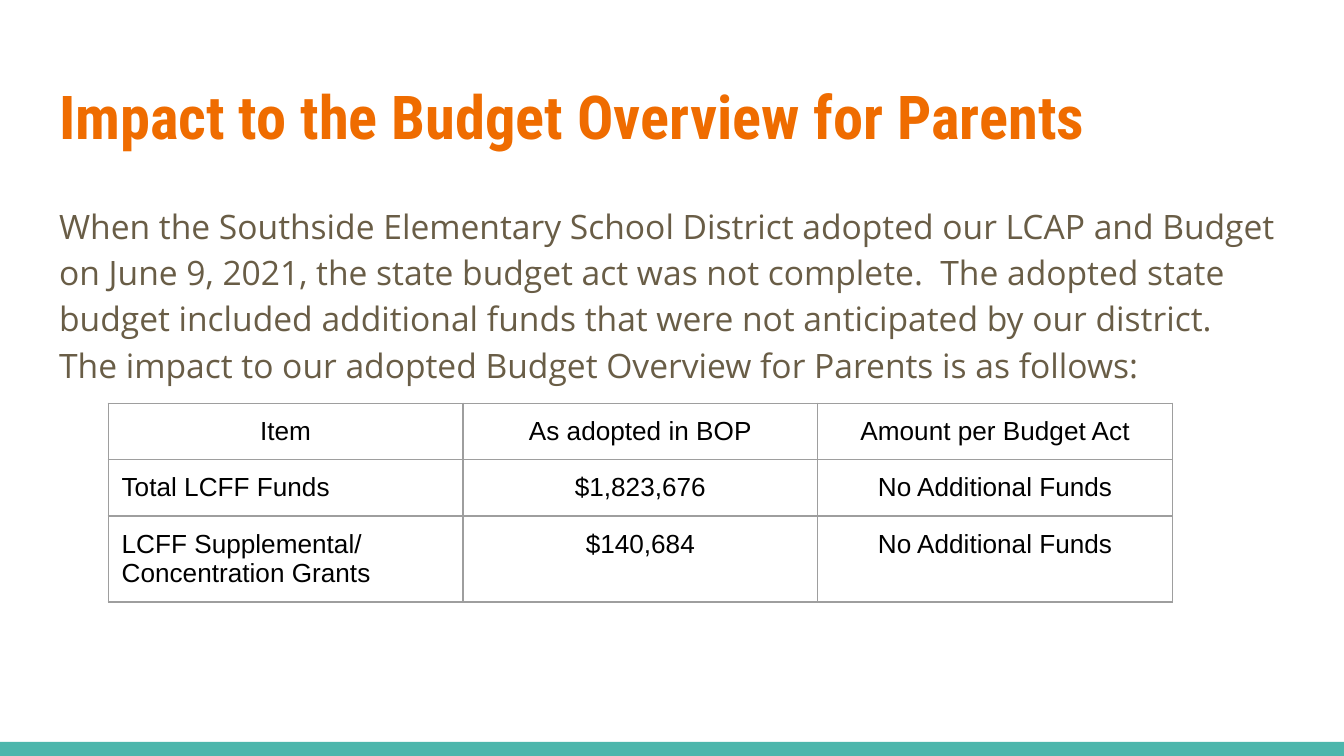
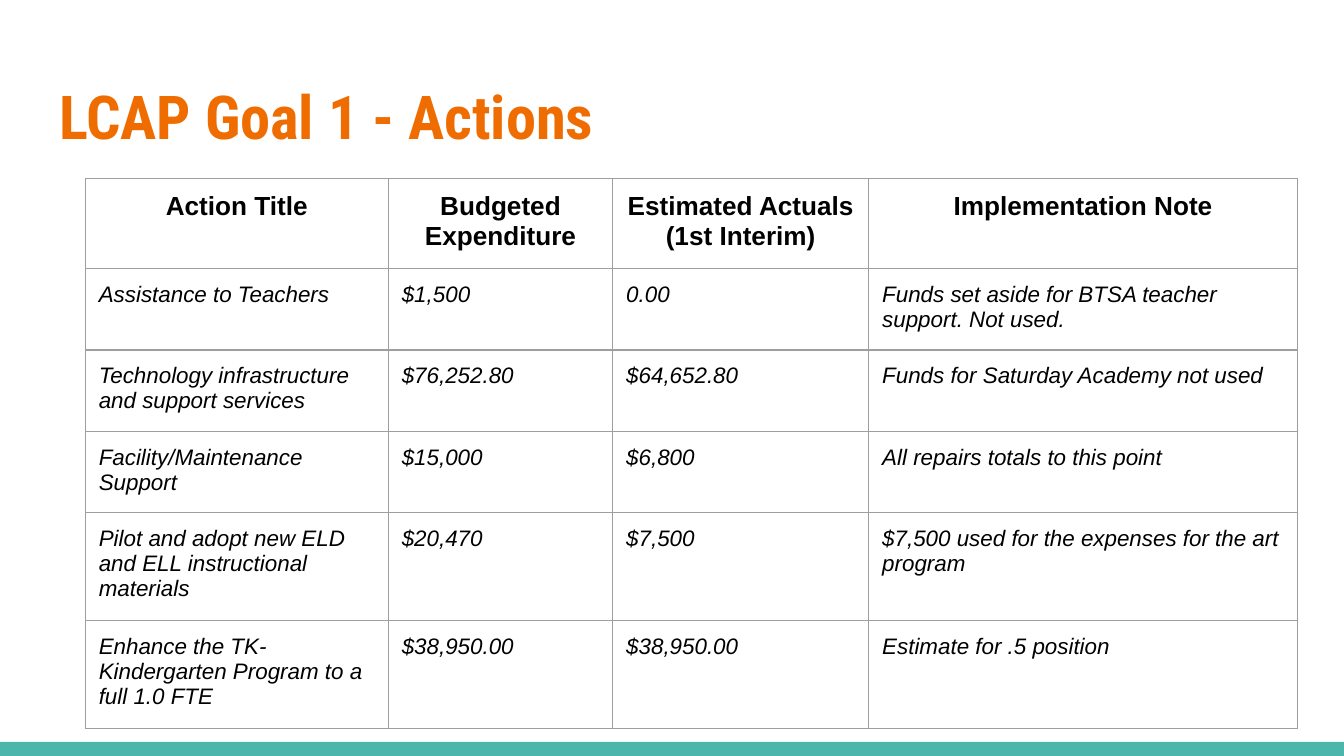
from collections import namedtuple

from lxml.etree import SubElement
from pptx import Presentation
from pptx.dml.color import RGBColor
from pptx.enum.shapes import MSO_SHAPE
from pptx.enum.text import MSO_ANCHOR, MSO_AUTO_SIZE, PP_ALIGN
from pptx.oxml.ns import qn
from pptx.util import Inches, Pt

# Grid: 100 columns across the slide, square cells
COLUMNS, ROWS = 100, 56.25
CELL = Inches(10) / COLUMNS
Box = namedtuple("Box", "left top width height")

TITLE_BOX = Box(3.4, 4.9, 93.2, 7.7)
BODY_BOX = Box(3.4, 13.85, 93.2, 36.1)
BAND_BOX = Box(0, 55.2, COLUMNS, 1.05)

ORANGE, BROWN, TEAL = "EF6C00", "695D46", "4DB6AC"
BLACK, WHITE, GRAY = "000000", "FFFFFF", "9E9E9E"
TITLE_FONT, BODY_FONT, TABLE_FONT = "Roboto Condensed", "Open Sans", "Arial"
INSET = Inches(0.1)

INTRO = (
    "When the Southside Elementary School District adopted our LCAP and Budget on "
    "June 9, 2021, the state budget act was not complete.  The adopted state budget "
    "included additional funds that were not anticipated by our district.  The impact "
    "to our adopted Budget Overview for Parents is as follows:"
)
BUDGET_ROWS = [
    ["Item", "As adopted in BOP", "Amount per Budget Act"],
    ["Total LCFF Funds", "$1,823,676", "No Additional Funds"],
    ["LCFF Supplemental/ Concentration Grants", "$140,684", "No Additional Funds"],
]
ACTION_ROWS = [
    ["Action Title", "Budgeted Expenditure", "Estimated Actuals (1st Interim)",
     "Implementation Note"],
    ["Assistance to Teachers", "$1,500", "0.00",
     "Funds set aside for BTSA teacher support. Not used."],
    ["Technology infrastructure and support services", "$76,252.80", "$64,652.80",
     "Funds for Saturday Academy not used"],
    ["Facility/Maintenance Support", "$15,000", "$6,800",
     "All repairs totals to this point"],
    ["Pilot and adopt new ELD and ELL instructional materials", "$20,470", "$7,500",
     "$7,500 used for the expenses for the art program"],
    ["Enhance the TK-Kindergarten Program to a full 1.0 FTE", "$38,950.00",
     "$38,950.00", "Estimate for .5 position"],
]


def color(value):
    return RGBColor.from_string(value)


def grid(cells):
    return round(cells * CELL)


def place(shape, box):
    shape.left, shape.top, shape.width, shape.height = map(grid, box)


def style_text(para, font, size, ink, align=PP_ALIGN.LEFT, bold=False, italic=False):
    para.alignment = align
    for span in para.runs:
        span.font.name, span.font.size = font, Pt(size)
        span.font.bold, span.font.italic = bold, italic
        span.font.color.rgb = color(ink)


def fill_placeholder(shape, box, text):
    place(shape, box)
    frame = shape.text_frame
    frame.text = text
    frame.word_wrap = True
    frame.auto_size = MSO_AUTO_SIZE.NONE
    frame.vertical_anchor = MSO_ANCHOR.TOP
    frame.margin_left = frame.margin_right = INSET
    frame.margin_top = frame.margin_bottom = INSET
    para = frame.paragraphs[0]
    para.space_before = Pt(0)
    return para


def add_page(deck, layout, title):
    """Slide with the shared background, bottom band and title."""
    page = deck.slides.add_slide(deck.slide_layouts.get_by_name(layout))
    page.background.fill.solid()
    page.background.fill.fore_color.rgb = color(WHITE)

    band = page.shapes.add_shape(MSO_SHAPE.RECTANGLE, *map(grid, BAND_BOX))
    band.shadow.inherit = False
    band.fill.solid()
    band.fill.fore_color.rgb = color(TEAL)
    band.line.fill.background()

    para = fill_placeholder(page.shapes.title, TITLE_BOX, title)
    style_text(para, TITLE_FONT, 32.4, ORANGE, bold=True)
    return page


def add_body(page, box, text):
    para = fill_placeholder(page.placeholders[1], box, text)
    para.line_spacing = 1.15
    style_text(para, BODY_FONT, 18, BROWN)
    # Plain paragraph: no bullet, no hanging indent
    properties = para._p.get_or_add_pPr()
    properties.set("marL", "0")
    properties.set("indent", "0")
    SubElement(properties, qn("a:buNone"))


def format_cell(cell):
    cell.margin_left = cell.margin_right = INSET
    cell.margin_top = cell.margin_bottom = INSET
    cell.vertical_anchor = MSO_ANCHOR.TOP
    # Borders come before the fill in the cell properties
    properties = cell._tc.get_or_add_tcPr()
    for side in ("lnL", "lnR", "lnT", "lnB"):
        border = SubElement(properties, qn(f"a:{side}"), w=str(Pt(0.75)))
        paint = SubElement(border, qn("a:solidFill"))
        SubElement(paint, qn("a:srgbClr"), val=GRAY)
    cell.fill.solid()
    cell.fill.fore_color.rgb = color(WHITE)


def add_grid_table(page, left, top, widths, heights, rows, cell_style):
    """Table whose text style is given by cell_style(row, column)."""
    box = Box(left, top, sum(widths), sum(heights))
    frame = page.shapes.add_table(len(rows), len(widths), *map(grid, box))
    table = frame.table
    table.first_row = table.horz_banding = False
    for column, width in zip(table.columns, widths):
        column.width = grid(width)
    for row, height in zip(table.rows, heights):
        row.height = grid(height)
    for r, texts in enumerate(rows):
        for c, text in enumerate(texts):
            cell = table.cell(r, c)
            cell.text = text
            format_cell(cell)
            style_text(cell.text_frame.paragraphs[0], TABLE_FONT, ink=BLACK,
                       **cell_style(r, c))


def budget_style(row, column):
    is_label = row > 0 and column == 0
    return {"size": 14, "align": PP_ALIGN.LEFT if is_label else PP_ALIGN.CENTER}


def action_style(row, column):
    if row == 0:
        return {"size": 14, "align": PP_ALIGN.CENTER, "bold": True}
    return {"size": 12, "italic": True}


def budget_slide(deck):
    page = add_page(deck, "Title and Content", "Impact to the Budget Overview for Parents")
    add_body(page, BODY_BOX, INTRO)
    add_grid_table(page, 8.05, 30, [26.4] * 3, [4.2, 4.2, 6.4],
                   BUDGET_ROWS, budget_style)


def actions_slide(deck):
    page = add_page(deck, "Title Only", "LCAP Goal 1 - Actions")
    add_grid_table(page, 6.35, 13.3, [22.55, 16.7, 19.05, 31.9],
                   [6.7, 6.05, 6.05, 6.05, 8.05, 8.05], ACTION_ROWS, action_style)


def main():
    deck = Presentation()
    deck.slide_width, deck.slide_height = grid(COLUMNS), grid(ROWS)
    budget_slide(deck)
    actions_slide(deck)
    deck.save("out.pptx")


if __name__ == "__main__":
    main()
